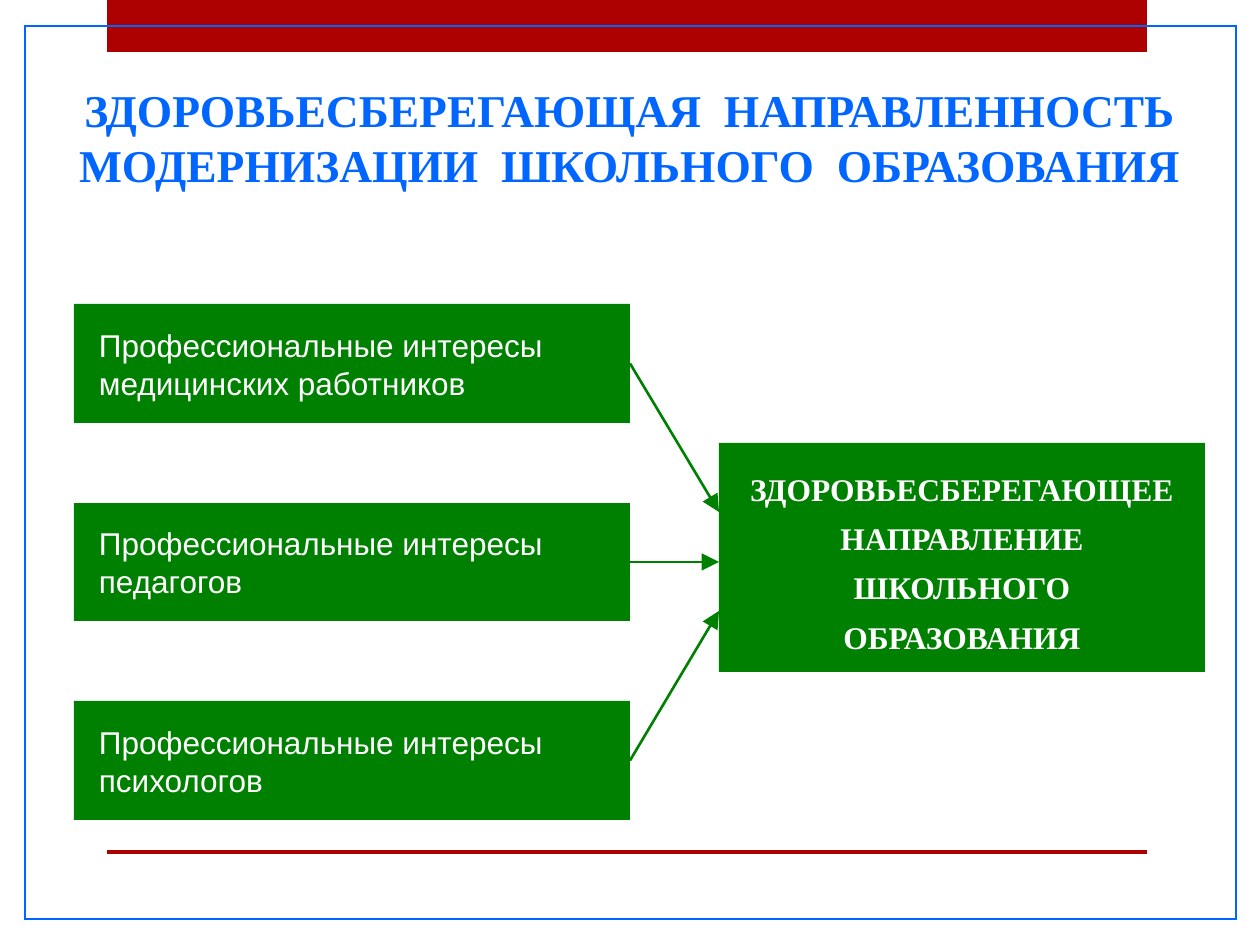
import pptx
import pptx.util
import pptx.dml.color
import pptx.enum.shapes
import pptx.enum.text
import pptx.oxml.ns
import lxml.etree

PX = 914400 / 126
RED, BLUE, GREEN, WHITE = "AD0101", "0066FF", "008000", "FFFFFF"
ALIGN = pptx.enum.text.PP_ALIGN
ANCHOR = pptx.enum.text.MSO_ANCHOR
qn = pptx.oxml.ns.qn


def paint(fmt, color):
    fmt.solid()
    fmt.fore_color.rgb = pptx.dml.color.RGBColor.from_string(color)


def write(s, text, font, size, color, bold, align, anchor, inset):
    tf = s.text_frame
    tf.word_wrap = True
    tf.vertical_anchor = anchor
    tf.margin_left = tf.margin_right = round(13 * PX)
    tf.margin_top = tf.margin_bottom = round(inset * PX)
    p = tf.paragraphs[0]
    p.text = text
    p.alignment = align
    for r in p.runs:
        r.font.name = font
        r.font.size = pptx.util.Pt(size)
        r.font.bold = bold
        paint(r.font.fill, color)
    return p


prs = pptx.Presentation()
prs.slide_width = round(1260 * PX)
prs.slide_height = round(945 * PX)
slide = prs.slides.add_slide(prs.slide_layouts[6])

rects = {}
for key, box, fill in [
    ("top band", (107, 0, 1040, 52), RED),
    ("bottom rule", (107, 850, 1040, 4), RED),
    ("frame", (25, 26, 1211, 893), None),
    ("direction", (719, 443, 486, 229), GREEN),
    ("doctors", (74, 304, 556, 119), GREEN),
    ("teachers", (74, 503, 556, 118), GREEN),
    ("psychologists", (74, 701, 556, 119), GREEN),
]:
    sp = slide.shapes.add_shape(pptx.enum.shapes.MSO_SHAPE.RECTANGLE, *[round(v * PX) for v in box])
    sp.shadow.inherit = False
    if fill:
        paint(sp.fill, fill)
        sp.line.fill.background()
    else:
        sp.fill.background()
        paint(sp.line.fill, BLUE)
        sp.line.width = pptx.util.Pt(1.5)
        lxml.etree.SubElement(sp.line._get_or_add_ln(), qn("a:miter"), lim="800000")
    rects[key] = sp

title = slide.shapes.add_textbox(*[round(v * PX) for v in (35, 76, 1190, 122)])
write(title, "ЗДОРОВЬЕСБЕРЕГАЮЩАЯ  НАПРАВЛЕННОСТЬ\nМОДЕРНИЗАЦИИ  ШКОЛЬНОГО  ОБРАЗОВАНИЯ",
      "Times New Roman", 26, BLUE, True, ALIGN.CENTER, ANCHOR.TOP, 6)

p = write(rects["direction"], "ЗДОРОВЬЕСБЕРЕГАЮЩЕЕ\nНАПРАВЛЕНИЕ\nШКОЛЬНОГО\nОБРАЗОВАНИЯ",
          "Times New Roman", 18, WHITE, True, ALIGN.CENTER, ANCHOR.TOP, 16)
p.line_spacing = 1.3

for key, group, end_y in [
    ("doctors", "медицинских работников", 512),
    ("teachers", "педагогов", 562),
    ("psychologists", "психологов", 611),
]:
    sp = rects[key]
    p = write(sp, "Профессиональные интересы\n" + group,
              "Arial", 18, WHITE, False, ALIGN.LEFT, ANCHOR.MIDDLE, 16)
    p._p.get_or_add_pPr().set("marL", str(round(12 * PX)))

    arrow = slide.shapes.add_connector(pptx.enum.shapes.MSO_CONNECTOR.STRAIGHT,
                                       sp.left + sp.width, sp.top + sp.height // 2,
                                       round(719 * PX), round(end_y * PX))
    arrow.begin_connect(sp, 3)
    paint(arrow.line.fill, GREEN)
    arrow.line.width = pptx.util.Pt(1.5)
    lxml.etree.SubElement(arrow.line._get_or_add_ln(), qn("a:tailEnd"),
                          type="triangle", w="lg", len="lg")
    lxml.etree.SubElement(arrow._element.spPr, qn("a:effectLst"))

prs.save("out.pptx")
